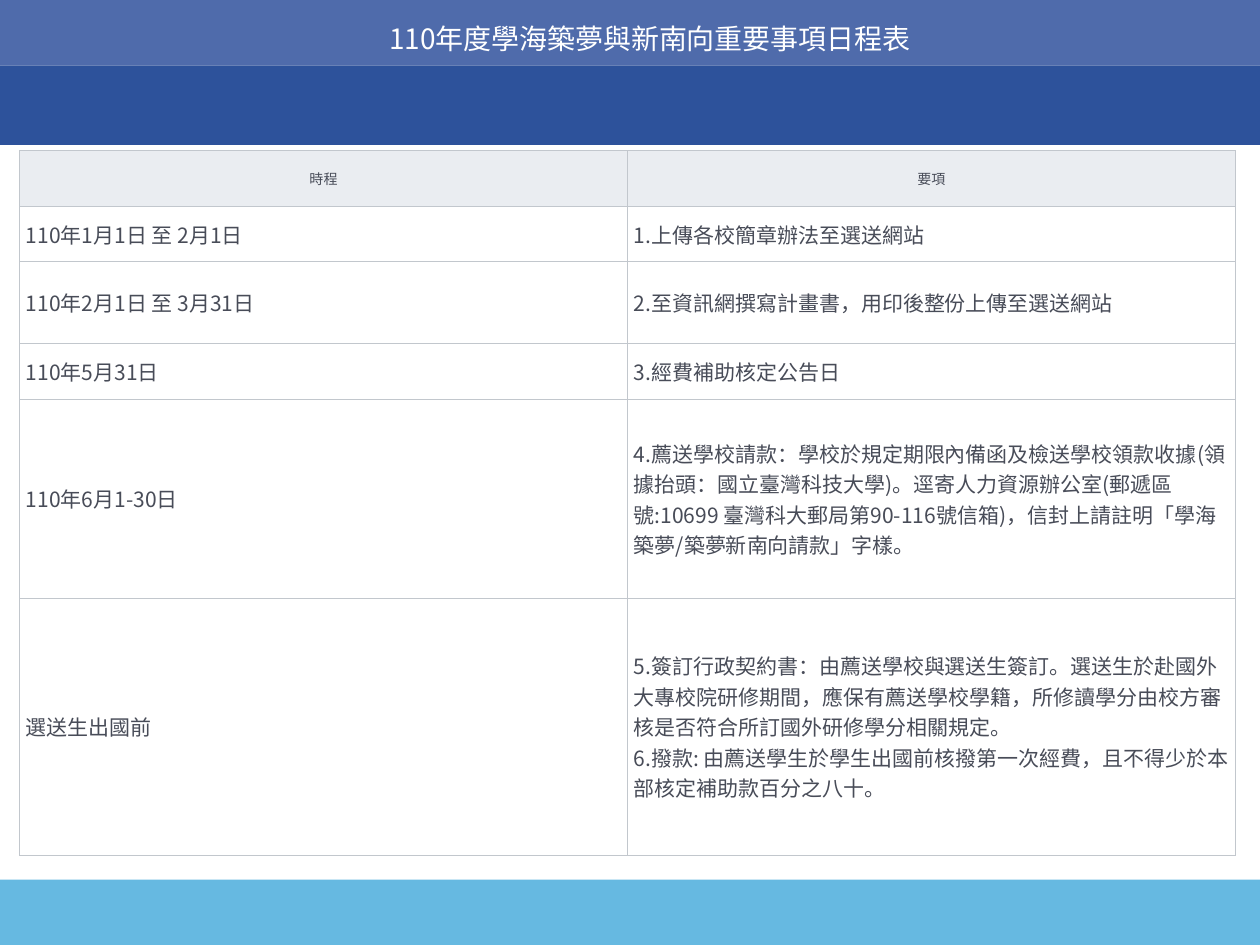
from lxml.etree import SubElement, fromstring
from pptx import Presentation
from pptx.dml.color import RGBColor
from pptx.enum.shapes import MSO_SHAPE as Shape
from pptx.enum.text import MSO_ANCHOR as Anchor, MSO_AUTO_SIZE as AutoSize, PP_ALIGN as Align
from pptx.oxml.ns import nsdecls, qn
from pptx.util import Pt

SCHEDULE = [
    ("時程", "要項"),
    ("110年1月1日 至 2月1日", "1.上傳各校簡章辦法至選送網站"),
    ("110年2月1日 至 3月31日", "2.至資訊網撰寫計畫書，用印後整份上傳至選送網站"),
    ("110年5月31日", "3.經費補助核定公告日"),
    ("110年6月1-30日",
     "4.薦送學校請款：學校於規定期限內備函及檢送學校領款收據(領據抬頭：國立臺灣科技大學)。"
     "逕寄人力資源辦公室(郵遞區號:10699 臺灣科大郵局第90-116號信箱)，"
     "信封上請註明「學海築夢/築夢新南向請款」字樣。"),
    ("選送生出國前",
     "5.簽訂行政契約書：由薦送學校與選送生簽訂。選送生於赴國外大專校院研修期間，"
     "應保有薦送學校學籍，所修讀學分由校方審核是否符合所訂國外研修學分相關規定。\n"
     "6.撥款: 由薦送學生於學生出國前核撥第一次經費，且不得少於本部核定補助款百分之八十。"),
]
ROW_HEIGHTS = [31.7, 31.7, 46.8, 31.7, 113.8, 146.9]


def color(value):
    return RGBColor.from_string(value)


class ScheduleSlide:
    font = "Noto Sans CJK SC"
    ink = "484C58"
    header_fill = "EAEDF1"
    rule = "C2C7CD"
    inset = Pt(3.6)

    def __init__(self, slide):
        self.slide = slide

    def band(self, top, height, fill):
        band = self.slide.shapes.add_shape(Shape.RECTANGLE, 0, Pt(top), Pt(720), Pt(height))
        band.shadow.inherit = False
        band.fill.solid()
        band.fill.fore_color.rgb = color(fill)
        band.line.fill.background()

    def add_text(self, paragraph, text, size, ink, align):
        paragraph.alignment = align
        for index, line in enumerate(text.split("\n")):
            if index:
                paragraph.add_line_break()
            run = paragraph.add_run()
            run.text = line
            run.font.size = Pt(size)
            run.font.name = self.font
            run.font.color.rgb = color(ink)
            SubElement(run.font._element, qn("a:ea"), typeface=self.font)

    def title(self, text, left, top, width, height):
        title = self.slide.shapes.title
        title.left, title.top, title.width, title.height = map(Pt, (left, top, width, height))
        frame = title.text_frame
        frame.word_wrap = True
        frame.auto_size = AutoSize.NONE
        frame.vertical_anchor = Anchor.TOP
        frame.margin_top = 0
        self.add_text(frame.paragraphs[0], text, 16, "FFFFFF", Align.CENTER)
        title.element.getparent().append(title.element)

    def borders(self, cell):
        properties = cell._tc.get_or_add_tcPr()
        for index, side in enumerate("LRTB"):
            properties.insert(index, fromstring(
                f'<a:ln{side} {nsdecls("a")} w="{Pt(0.6)}"><a:solidFill>'
                f'<a:srgbClr val="{self.rule}"/></a:solidFill></a:ln{side}>'))

    def cell(self, cell, text, header):
        cell.vertical_anchor = Anchor.MIDDLE
        cell.margin_left = cell.margin_right = self.inset
        cell.margin_top = cell.margin_bottom = self.inset
        if header:
            cell.fill.solid()
            cell.fill.fore_color.rgb = color(self.header_fill)
        else:
            cell.fill.background()
        self.borders(cell)
        self.add_text(cell.text_frame.paragraphs[0], text, 8 if header else 12, self.ink,
                      Align.CENTER if header else Align.LEFT)

    def table(self, rows, heights, left, top, width):
        columns = len(rows[0])
        table = self.slide.shapes.add_table(
            len(rows), columns, Pt(left), Pt(top), Pt(width), Pt(sum(heights))).table
        table.first_row = table.horz_banding = False
        for column in table.columns:
            column.width = Pt(width / columns)
        for index, (texts, height) in enumerate(zip(rows, heights)):
            table.rows[index].height = Pt(height)
            for cell, text in zip(table.rows[index].cells, texts):
                self.cell(cell, text, header=index == 0)


def main():
    deck = Presentation()
    deck.slide_width, deck.slide_height = Pt(720), Pt(540)
    page = ScheduleSlide(deck.slides.add_slide(deck.slide_layouts[5]))
    page.band(37.4, 45.4, "2D529B")
    page.band(0, 37.4, "4F6BAB")
    page.band(502.6, 37.4, "66B9E1")
    page.table(SCHEDULE, ROW_HEIGHTS, 11.2, 86.2, 694.8)
    page.title("110年度學海築夢與新南向重要事項日程表", -150.5, 12.2, 1044, 72.7)
    deck.save("out.pptx")


if __name__ == "__main__":
    main()
